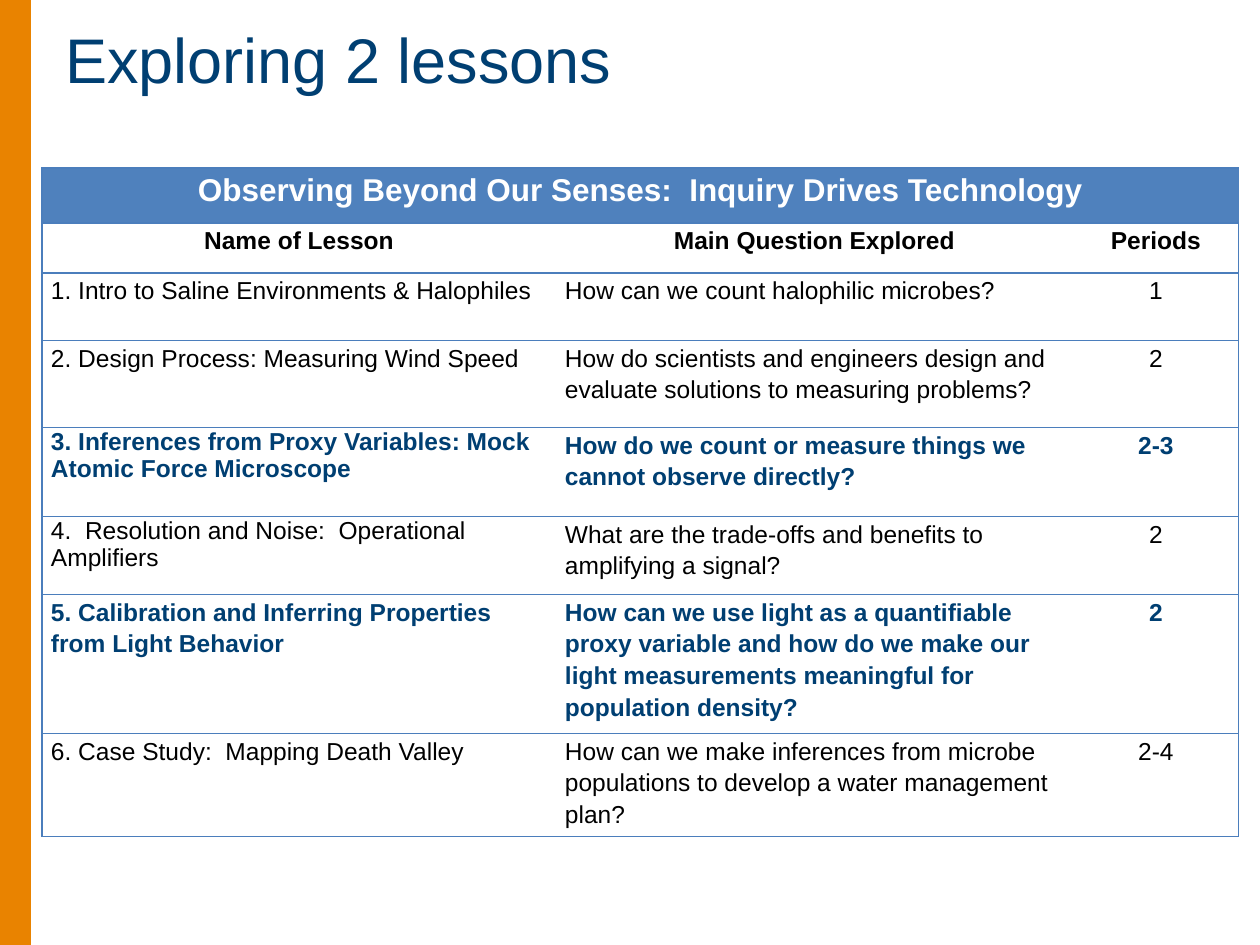
from lxml import etree
from pptx import Presentation, util as u
from pptx.dml.color import RGBColor
from pptx.enum import shapes, text
from pptx.oxml.ns import qn

PX = u.Inches(1) // 126
NAVY, ORANGE, BLUE, RULE = "003F72", "E98300", "4F81BD", "4B7EBC"
BLACK, WHITE = "000000", "FFFFFF"

COLUMN_WIDTHS = [514, 517, 166]
ROW_HEIGHTS = [55, 50, 68, 87, 89, 78, 139, 103]
UNIT_TITLE = "Observing Beyond Our Senses:  Inquiry Drives Technology"
HEADINGS = ["Name of Lesson", "Main Question Explored", "Periods"]
LESSONS = [
    ("1. Intro to Saline Environments & Halophiles",
     "How can we count halophilic microbes?", "1"),
    ("2. Design Process: Measuring Wind Speed",
     "How do scientists and engineers design and evaluate solutions to measuring problems?", "2"),
    ("3. Inferences from Proxy Variables: Mock Atomic Force Microscope",
     "How do we count or measure things we cannot observe directly?", "2-3"),
    ("4.  Resolution and Noise:  Operational Amplifiers",
     "What are the trade-offs and benefits to amplifying a signal?", "2"),
    ("5. Calibration and Inferring Properties from Light Behavior",
     "How can we use light as a quantifiable proxy variable and how do we make our "
     "light measurements meaningful for population density?", "2"),
    ("6. Case Study:  Mapping Death Valley",
     "How can we make inferences from microbe populations to develop a water management plan?",
     "2-4"),
]
HIGHLIGHTED = {3, 5}
TIGHT_NAMES = {3, 4}


def px(*lengths):
    return [n * PX for n in lengths]


def color(value):
    return RGBColor.from_string(value)


def style_runs(paragraph, size, ink, bold=False):
    for run in paragraph.runs:
        run.font.name = "Arial"
        run.font.size = u.Pt(size)
        run.font.bold = bold
        run.font.color.rgb = color(ink)


def add_side_bar(slide):
    bar = slide.shapes.add_shape(shapes.MSO_SHAPE.RECTANGLE, *px(0, 0, 31, 945))
    bar.shadow.inherit = False
    bar.fill.solid()
    bar.fill.fore_color.rgb = color(ORANGE)
    bar.line.fill.background()


def add_title(slide, title):
    frame = slide.shapes.add_textbox(*px(53, -21, 1134, 158)).text_frame
    frame.word_wrap = True
    frame.vertical_anchor = text.MSO_ANCHOR.MIDDLE
    frame.text = title
    style_runs(frame.paragraphs[0], 36, NAVY)


def set_borders(cell, ruled_sides):
    properties = cell._tc.get_or_add_tcPr()
    for side in "LRTB":
        line = etree.SubElement(properties, qn(f"a:ln{side}"), w=str(u.Pt(0.75)))
        if side in ruled_sides:
            fill = etree.SubElement(line, qn("a:solidFill"))
            etree.SubElement(fill, qn("a:srgbClr"), val=RULE)
        else:
            etree.SubElement(line, qn("a:noFill"))


def fill_cell(cell, words, size=14, ink=BLACK, bold=False, centered=True, tight=False):
    cell.margin_left, cell.margin_right, cell.margin_top, cell.margin_bottom = px(9, 9, 0, 0)
    cell.text_frame.text = words
    paragraph = cell.text_frame.paragraphs[0]
    paragraph.alignment = text.PP_ALIGN.CENTER if centered else text.PP_ALIGN.LEFT
    paragraph.line_spacing = 1.0 if tight else 1.15
    paragraph.space_after = u.Pt(0 if tight else 10)
    style_runs(paragraph, size, ink, bold)


def add_lesson_table(slide):
    table = slide.shapes.add_table(
        len(ROW_HEIGHTS), len(COLUMN_WIDTHS),
        *px(42, 168, sum(COLUMN_WIDTHS), sum(ROW_HEIGHTS))).table
    table.first_row = table.horz_banding = False
    for column, width in zip(table.columns, COLUMN_WIDTHS):
        column.width = width * PX
    for row, height in zip(table.rows, ROW_HEIGHTS):
        row.height = height * PX

    # Rules above and below every row, and at the outer edges only
    for row in table.rows:
        for cell, outer_side in zip(row.cells, ["L", "", "R"]):
            set_borders(cell, "TB" + outer_side)
            cell.fill.background()

    # Unit title across all columns
    unit = table.cell(0, 0)
    unit.merge(table.cell(0, 2))
    unit.fill.solid()
    unit.fill.fore_color.rgb = color(BLUE)
    fill_cell(unit, UNIT_TITLE, size=18, ink=WHITE, bold=True)

    # Column headings
    for column, heading in enumerate(HEADINGS):
        fill_cell(table.cell(1, column), heading, bold=True)

    # Lessons
    for number, lesson in enumerate(LESSONS, 1):
        strong = number in HIGHLIGHTED
        for column, words in enumerate(lesson):
            fill_cell(table.cell(number + 1, column), words,
                      ink=NAVY if strong else BLACK, bold=strong,
                      centered=column == 2,
                      tight=column == 0 and number in TIGHT_NAMES)


def main():
    deck = Presentation()
    deck.slide_width, deck.slide_height = px(1260, 945)
    slide = deck.slides.add_slide(deck.slide_layouts[6])
    add_side_bar(slide)
    add_title(slide, "Exploring 2 lessons")
    add_lesson_table(slide)
    deck.save("out.pptx")


if __name__ == "__main__":
    main()
